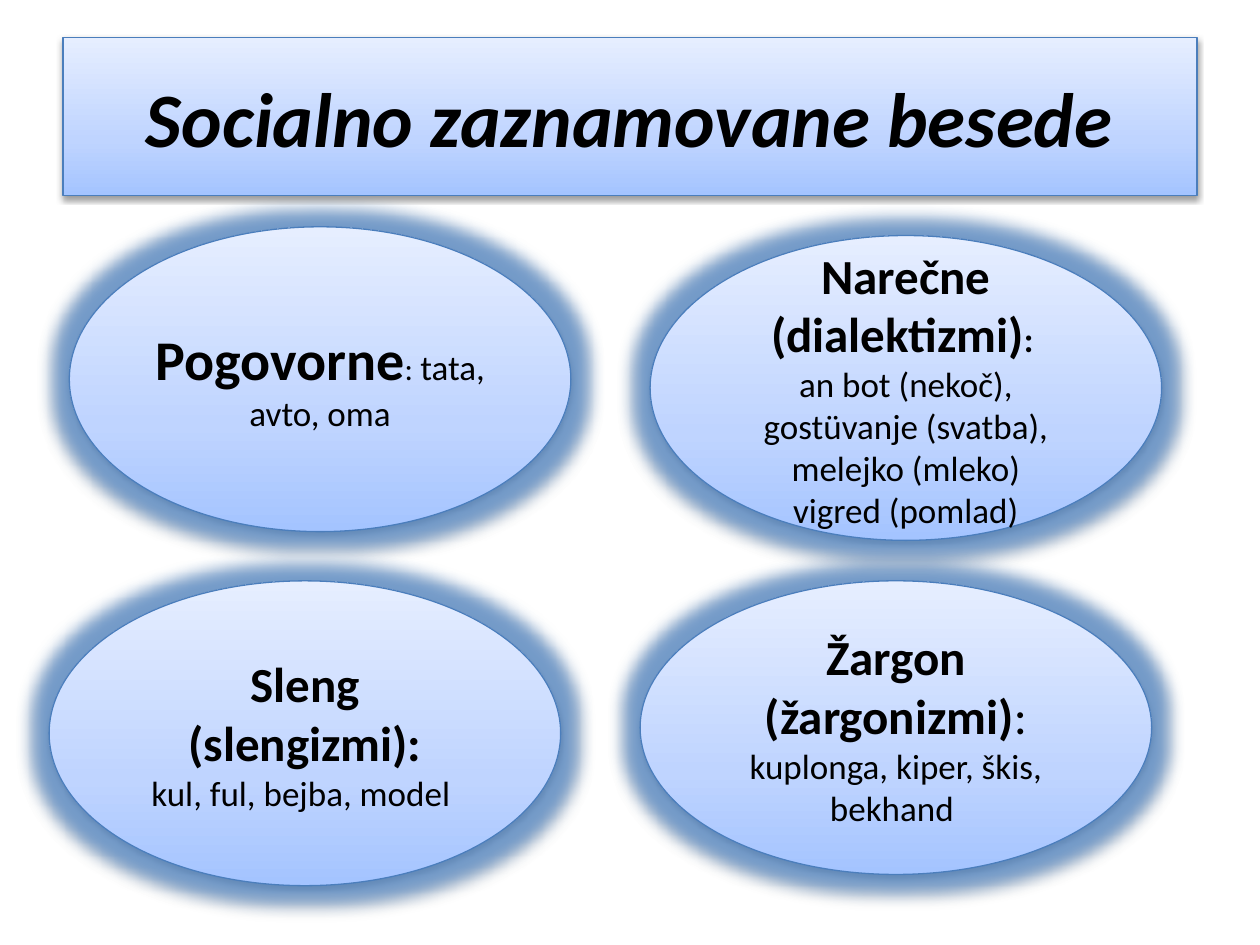
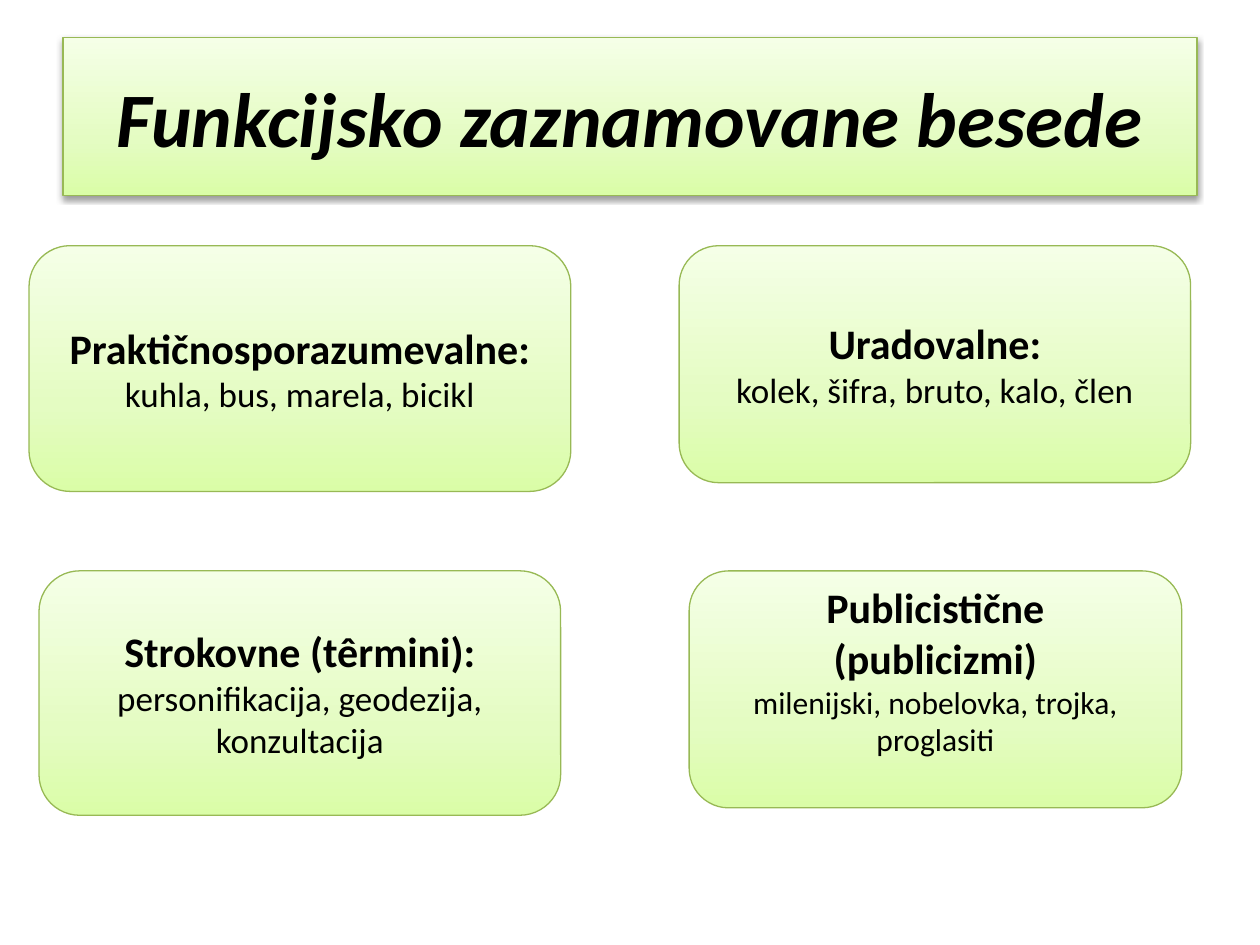
from dataclasses import dataclass

from lxml.etree import SubElement
from pptx import Presentation
from pptx.dml.color import RGBColor
from pptx.enum.shapes import MSO_SHAPE as Preset
from pptx.enum.text import MSO_ANCHOR as Anchor, PP_ALIGN as Align
from pptx.oxml.ns import qn
from pptx.util import Pt

FONT = "Calibri"
TITLE_ONLY = 5
COLORS = {
    "text": "000000",
    "shadow": "000000",
    "glow": "4080CC",
    "blue_line": "4B7EBC",
    "blue_deep": "A4C4FF",
    "blue_mid": "BFD4FF",
    "blue_pale": "E6EEFF",
    "green_line": "98B955",
    "green_deep": "DAFDA7",
    "green_mid": "E4FCC2",
    "green_pale": "F5FFE7",
}


@dataclass
class Span:
    text: str
    size: float
    bold: bool = False
    italic: bool = False


@dataclass
class Card:
    left: float
    top: float
    width: float
    height: float
    paras: list[list[Span]]
    bottom_inset: float = 3.6


@dataclass
class Topic:
    title: str
    hue: str
    preset: Preset
    cards: list[Card]
    shadow: bool = False
    glow: bool = False


# Slide content
SOCIAL = Topic("Socialno zaznamovane besede", "blue", Preset.OVAL, [
    Card(39.6, 129.6, 286.6, 174.2, [
        [Span("Pogovorne", 32, True), Span(": ", 18), Span("tata, avto, oma", 20)],
    ]),
    Card(371.5, 134.6, 292.3, 174.2, [
        [Span("Narečne (dialektizmi)", 28, True), Span(":", 20, True), Span(" ", 18)],
        [Span("an bot (nekoč), gostüvanje (svatba),", 20)],
        [Span("melejko (mleko)", 20)],
        [Span("vigred (pomlad)", 20)],
    ]),
    Card(28.1, 331.9, 292.3, 174.2, [
        [Span("Sleng (slengizmi):", 28, True)],
        [Span("kul, ful, bejba, model ", 20)],
    ]),
    Card(365.8, 331.9, 292.3, 167.8, [
        [Span("Žargon", 28, True)],
        [Span("(žargonizmi)", 28, True), Span(":", 28)],
        [Span("kuplonga, kiper, škis, bekhand ", 20)],
    ]),
], shadow=True, glow=True)

FUNCTIONAL = Topic("Funkcijsko zaznamovane besede", "green", Preset.ROUNDED_RECTANGLE, [
    Card(16.6, 140.4, 309.6, 140.4, [
        [Span("Praktičnosporazumevalne:", 24, True)],
        [Span("kuhla, bus, marela, bicikl", 20)],
    ]),
    Card(388.1, 140.4, 292.3, 135.4, [
        [Span("Uradovalne:", 24, True)],
        [Span("kolek, šifra, bruto, kalo, člen", 20)],
    ]),
    Card(22.3, 326.2, 298.1, 139.7, [
        [Span("Strokovne (têrmini):", 24, True)],
        [Span("personifikacija, geodezija, konzultacija", 20)],
    ]),
    Card(393.8, 326.2, 281.5, 135.4, [
        [Span("Publicistične", 24, True)],
        [Span("(publicizmi)", 24, True)],
        [Span("milenijski, nobelovka, trojka, proglasiti", 18)],
    ], bottom_inset=25.6),
])


def add_color(parent, name: str, alpha: int | None = None) -> None:
    color = SubElement(parent, qn("a:srgbClr"), val=COLORS[name])
    if alpha is not None:
        SubElement(color, qn("a:alpha"), val=str(alpha * 1000))


def style_shape(shape, hue: str, shadow: bool, glow: bool) -> None:
    """Apply the three-stop gradient, the outline and the effects."""
    shape.fill.gradient()
    shape.fill.gradient_angle = 90
    properties = shape.element.spPr
    stops = properties.find(qn("a:gradFill")).find(qn("a:gsLst"))
    for stop in list(stops):
        stops.remove(stop)
    for position, tone in ((0, "deep"), (35, "mid"), (100, "pale")):
        stop = SubElement(stops, qn("a:gs"), pos=str(position * 1000))
        add_color(stop, f"{hue}_{tone}")
    shape.line.color.rgb = RGBColor.from_string(COLORS[f"{hue}_line"])
    shape.line.width = Pt(0.75)

    shape.shadow.inherit = False
    effects = properties.find(qn("a:effectLst"))
    if glow:
        halo = SubElement(effects, qn("a:glow"), rad=str(Pt(18)))
        add_color(halo, "glow", 60)
    if shadow:
        drop = SubElement(effects, qn("a:outerShdw"), blurRad=str(Pt(3.1)),
                          dist=str(Pt(1.6)), dir="5400000", rotWithShape="0")
        add_color(drop, "shadow", 38)


def write_text(shape, paras: list[list[Span]]) -> None:
    frame = shape.text_frame
    frame.word_wrap = True
    frame.vertical_anchor = Anchor.MIDDLE
    for index, spans in enumerate(paras):
        para = frame.add_paragraph() if index else frame.paragraphs[0]
        para.alignment = Align.CENTER
        for span in spans:
            run = para.add_run()
            run.text = span.text
            run.font.name = FONT
            run.font.size = Pt(span.size)
            run.font.bold = span.bold
            run.font.italic = span.italic
            run.font.color.rgb = RGBColor.from_string(COLORS["text"])


def add_topic(deck, topic: Topic) -> None:
    page = deck.slides.add_slide(deck.slide_layouts[TITLE_ONLY])

    # Title band
    title = page.shapes.title
    title.left, title.top, title.width, title.height = Pt(36), Pt(21.6), Pt(648), Pt(90)
    style_shape(title, topic.hue, shadow=True, glow=False)
    write_text(title, [[Span(topic.title, 44, True, True)]])

    # Word groups
    for card in topic.cards:
        box = page.shapes.add_shape(topic.preset, Pt(card.left), Pt(card.top),
                                    Pt(card.width), Pt(card.height))
        style_shape(box, topic.hue, topic.shadow, topic.glow)
        box.text_frame.margin_bottom = Pt(card.bottom_inset)
        write_text(box, card.paras)


def main() -> None:
    deck = Presentation()
    deck.slide_width, deck.slide_height = Pt(720), Pt(540)
    for topic in (SOCIAL, FUNCTIONAL):
        add_topic(deck, topic)
    deck.save("out.pptx")


if __name__ == "__main__":
    main()
